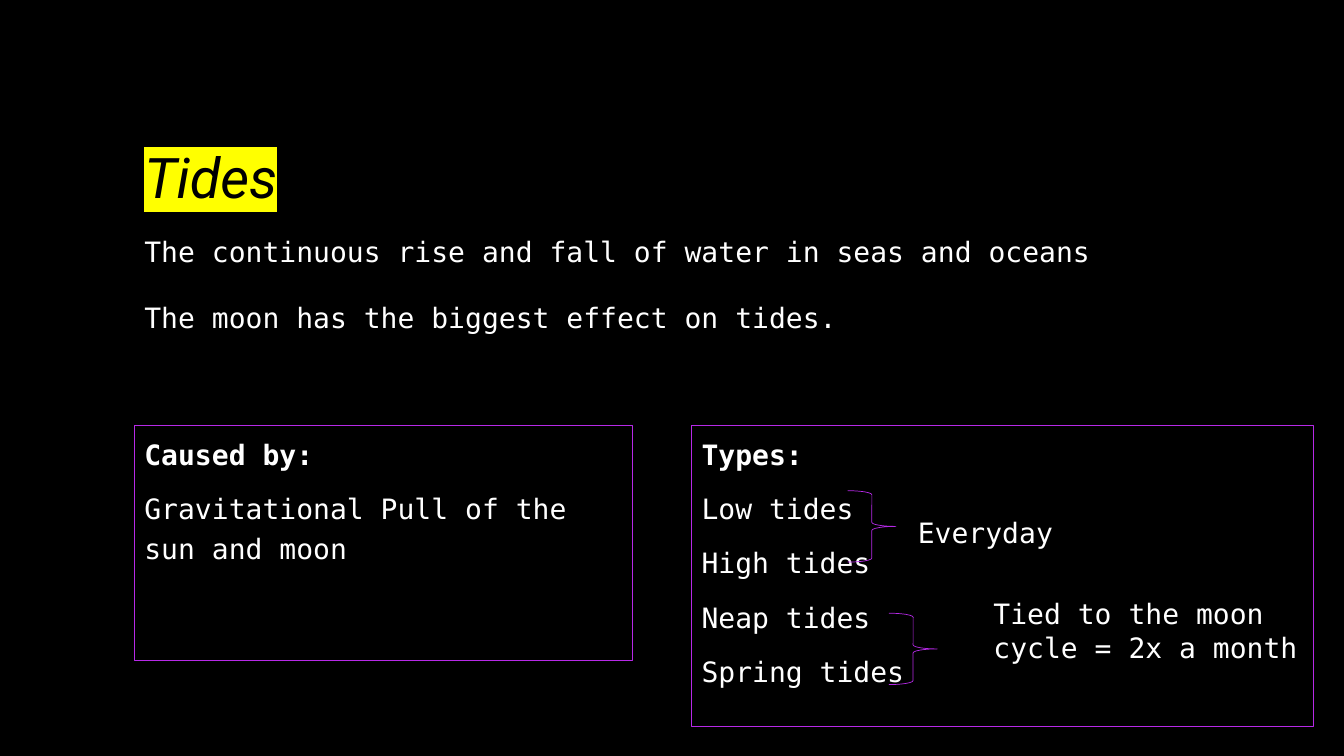
from lxml.etree import SubElement
from pptx import Presentation
from pptx.dml.color import RGBColor
from pptx.enum.shapes import MSO_SHAPE
from pptx.enum.text import MSO_ANCHOR, PP_ALIGN
from pptx.oxml.ns import qn
from pptx.util import Pt


def tint(code):
    return RGBColor.from_string(code)


class Deck:
    """Holds the style and the current slide, and draws each kind of element."""

    mono = "DejaVu Sans Mono"
    head = "Roboto"
    back = "000000"
    ink = "FFFFFF"
    edge = "B629E7"
    mark = "FFFF00"

    def __init__(self):
        self.show = Presentation()
        self.show.slide_width, self.show.slide_height = Pt(960), Pt(540)
        self.slide = self.show.slides.add_slide(self.show.slide_layouts[6])
        fill = self.slide.background.fill
        fill.solid()
        fill.fore_color.rgb = tint(self.back)

    def put(self, frame, lines, gap=0, lead=1.0, bold=False):
        frame.word_wrap = True
        for i, line in enumerate(lines):
            para = frame.add_paragraph() if i else frame.paragraphs[0]
            para.alignment = PP_ALIGN.LEFT
            para.line_spacing = lead
            if i:
                para.space_before = Pt(gap)
            run = para.add_run()
            run.text = line
            font = run.font
            font.size, font.name = Pt(20), self.mono
            font.bold = bold and i == 0
            font.color.rgb = tint(self.ink)

    def title(self, text, *place):
        frame = self.slide.shapes.add_textbox(*map(Pt, place)).text_frame
        frame.word_wrap = True
        frame.vertical_anchor = MSO_ANCHOR.BOTTOM
        para = frame.paragraphs[0]
        para.line_spacing = 1.2
        run = para.add_run()
        run.text = text
        font = run.font
        font.size, font.italic = Pt(40), True
        font.color.rgb = tint(self.back)
        light = SubElement(run._r.get_or_add_rPr(), qn("a:highlight"))
        SubElement(light, qn("a:srgbClr"), val=self.mark)
        font.name = self.head

    def text(self, lines, *place, gap=0):
        box = self.slide.shapes.add_textbox(*map(Pt, place))
        self.put(box.text_frame, lines, gap)

    def shape(self, kind, width, *place):
        shape = self.slide.shapes.add_shape(kind, *map(Pt, place))
        shape.shadow.inherit = False
        shape.fill.background()
        shape.line.color.rgb = tint(self.edge)
        shape.line.width = Pt(width)
        return shape

    def panel(self, lines, *place):
        frame = self.shape(MSO_SHAPE.RECTANGLE, 0.75, *place).text_frame
        frame.vertical_anchor = MSO_ANCHOR.TOP
        self.put(frame, lines, gap=10, lead=1.2, bold=True)

    def brace(self, left, top):
        self.shape(MSO_SHAPE.RIGHT_BRACE, 0.5, left, top, 34.5, 51)


def main():
    deck = Deck()
    deck.title("Tides", 96, 29, 747.5, 124.5)
    deck.panel(["Caused by:", "Gravitational Pull of the sun and moon"],
               96, 304, 355.5, 168)
    deck.panel(["Types:", "Low tides", "High tides", "Neap tides", "Spring tides"],
               494, 304, 444, 215)
    deck.text(["The continuous rise and fall of water in seas and oceans",
               "The moon has the biggest effect on tides."],
              96, 164, 727, 80, gap=23.3)
    deck.text(["Everyday"], 648.5, 364.5, 121, 31.5)
    deck.text(["Tied to the moon cycle = 2x a month"], 702.5, 422.5, 250.5, 55.5)
    deck.brace(605.5, 350.5)
    deck.brace(635, 438)
    deck.show.save("out.pptx")


if __name__ == "__main__":
    main()
